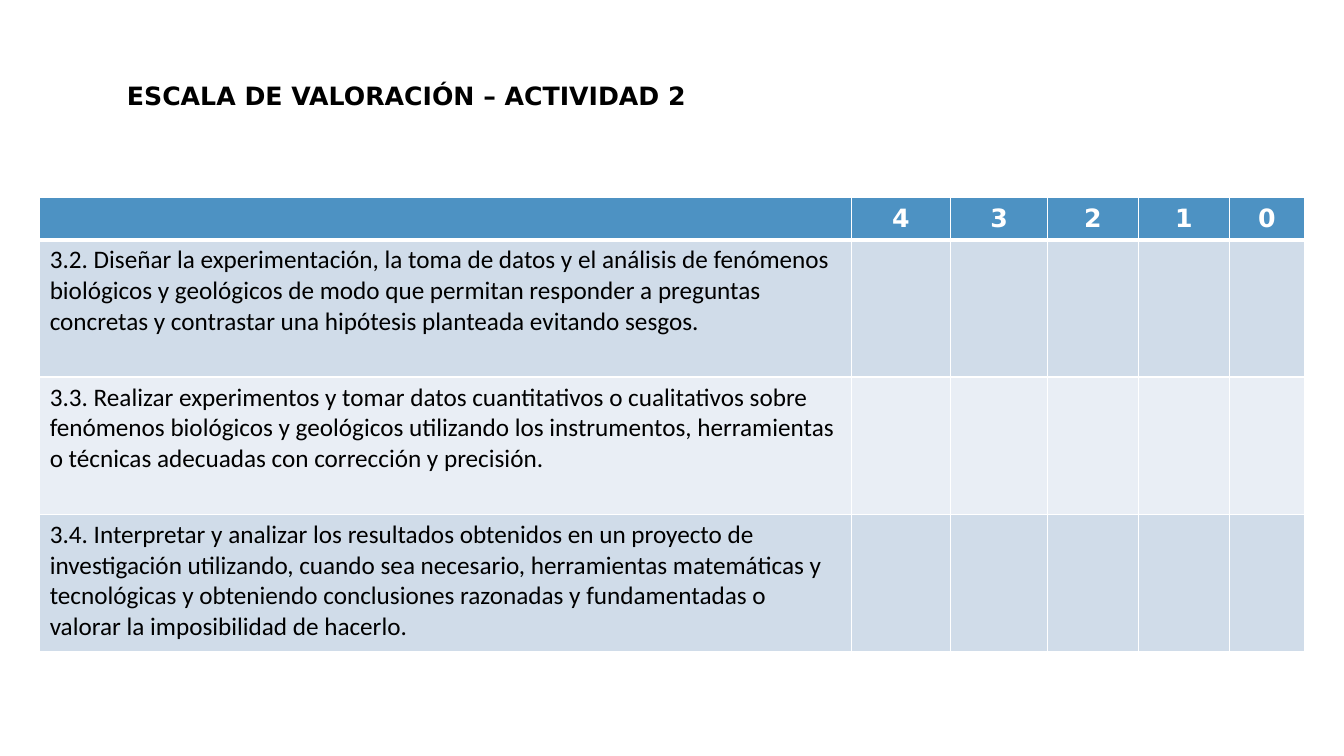
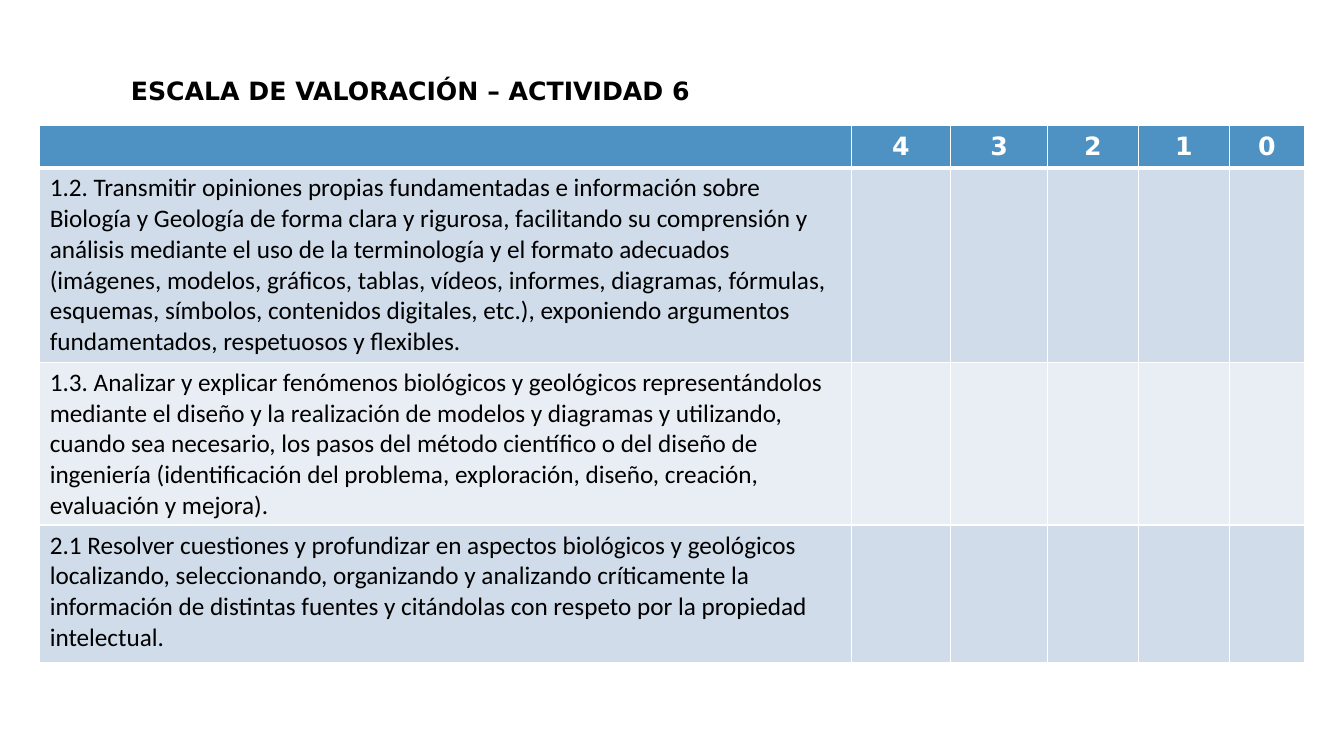
from lxml.etree import SubElement
from pptx import Presentation
from pptx.dml.color import RGBColor
from pptx.enum.text import MSO_ANCHOR, MSO_AUTO_SIZE, PP_ALIGN
from pptx.oxml.ns import qn
from pptx.util import Cm, Pt

WHITE = RGBColor(0xFF, 0xFF, 0xFF)
BLACK = RGBColor(0x00, 0x00, 0x00)
HEADER_BLUE = RGBColor(0x4D, 0x92, 0xC3)
BANDS = (RGBColor(0xD0, 0xDC, 0xE9), RGBColor(0xE9, 0xEE, 0xF5))

TITLE_FORMAT = {"name": "DejaVu Sans", "size": Pt(18), "bold": True, "color": BLACK}
HEADER_FORMAT = {**TITLE_FORMAT, "color": WHITE}
BODY_FORMAT = {"name": "Calibri", "size": Pt(18), "bold": False, "color": BLACK}

SCORES = ("", "4", "3", "2", "1", "0")
COLUMN_WIDTHS = (20.45, 2.51, 2.44, 2.29, 2.29, 1.9)
TABLE_LEFT = 1
HEADER_HEIGHT = 1.07
TITLE_SIZE = (15.24, 1.02)
THIN, THICK = Pt(1), Pt(3)

SCALES = [
    {
        "title": "ESCALA DE VALORACIÓN – ACTIVIDAD 2",
        "title_at": (2.95, 1.9),
        "table_top": 4.97,
        "criteria": [
            ("3.2. Diseñar la experimentación, la toma de datos y el análisis de fenómenos "
             "biológicos y geológicos de modo que permitan responder a preguntas concretas y "
             "contrastar una hipótesis planteada evitando sesgos.", 3.46),
            ("3.3. Realizar experimentos y tomar datos cuantitativos o cualitativos sobre "
             "fenómenos biológicos y geológicos utilizando los instrumentos, herramientas o "
             "técnicas adecuadas con corrección y precisión.", 3.46),
            ("3.4. Interpretar y analizar los resultados obtenidos en un proyecto de "
             "investigación utilizando, cuando sea necesario, herramientas matemáticas y "
             "tecnológicas y obteniendo conclusiones razonadas y fundamentadas o valorar la "
             "imposibilidad de hacerlo.", 3.46),
        ],
    },
    {
        "title": "ESCALA DE VALORACIÓN – ACTIVIDAD 6",
        "title_at": (3.05, 1.78),
        "table_top": 3.16,
        "criteria": [
            ("1.2. Transmitir opiniones propias fundamentadas e información sobre Biología y "
             "Geología de forma clara y rigurosa, facilitando su comprensión y análisis "
             "mediante el uso de la terminología y el formato adecuados (imágenes, modelos, "
             "gráficos, tablas, vídeos, informes, diagramas, fórmulas, esquemas, símbolos, "
             "contenidos digitales, etc.), exponiendo argumentos fundamentados, respetuosos "
             "y flexibles.", 4.9),
            ("1.3. Analizar y explicar fenómenos biológicos y geológicos representándolos "
             "mediante el diseño y la realización de modelos y diagramas y utilizando, cuando "
             "sea necesario, los pasos del método científico o del diseño de ingeniería "
             "(identificación del problema, exploración, diseño, creación, evaluación y "
             "mejora).", 4.1),
            ("2.1 Resolver cuestiones y profundizar en aspectos biológicos y geológicos "
             "localizando, seleccionando, organizando y analizando críticamente la "
             "información de distintas fuentes y citándolas con respeto por la propiedad "
             "intelectual.", 3.46),
        ],
    },
]


def write(frame, text, formats, align=PP_ALIGN.LEFT):
    para = frame.paragraphs[0]
    para.alignment = align
    span = para.add_run()
    span.text = text
    for name, value in formats.items():
        if name == "color":
            span.font.color.rgb = value
        else:
            setattr(span.font, name, value)


def paint_cell(cell, color, top, bottom):
    properties = cell._tc.get_or_add_tcPr()
    for side, width in (("L", THIN), ("R", THIN), ("T", top), ("B", bottom)):
        line = SubElement(properties, qn(f"a:ln{side}"), w=str(width))
        fill = SubElement(line, qn("a:solidFill"))
        SubElement(fill, qn("a:srgbClr"), val=str(WHITE))
    cell.fill.solid()
    cell.fill.fore_color.rgb = color


def add_title(page, text, position):
    box = page.shapes.add_textbox(*map(Cm, position + TITLE_SIZE))
    box.text_frame.word_wrap = True
    box.text_frame.auto_size = MSO_AUTO_SIZE.SHAPE_TO_FIT_TEXT
    write(box.text_frame, text, TITLE_FORMAT)


def add_scale(page, top, criteria):
    heights = [HEADER_HEIGHT] + [height for _, height in criteria]
    table = page.shapes.add_table(
        len(heights), len(SCORES), Cm(TABLE_LEFT), Cm(top),
        Cm(sum(COLUMN_WIDTHS)), Cm(sum(heights))).table
    table.horz_banding = False
    for column, width in zip(table.columns, COLUMN_WIDTHS):
        column.width = Cm(width)
    for row, height in zip(table.rows, heights):
        row.height = Cm(height)

    for cell, score in zip(table.rows[0].cells, SCORES):
        paint_cell(cell, HEADER_BLUE, THIN, THICK)
        cell.vertical_anchor = MSO_ANCHOR.MIDDLE
        if score:
            write(cell.text_frame, score, HEADER_FORMAT, PP_ALIGN.CENTER)

    for index, (criterion, _) in enumerate(criteria):
        cells = list(table.rows[index + 1].cells)
        for cell in cells:
            paint_cell(cell, BANDS[index % 2], THIN if index else THICK, THIN)
        write(cells[0].text_frame, criterion, BODY_FORMAT)


def main():
    deck = Presentation()
    deck.slide_width, deck.slide_height = Cm(33.87), Cm(19.05)
    for scale in SCALES:
        page = deck.slides.add_slide(deck.slide_layouts[6])
        add_scale(page, scale["table_top"], scale["criteria"])
        add_title(page, scale["title"], scale["title_at"])
    deck.save("out.pptx")


if __name__ == "__main__":
    main()
